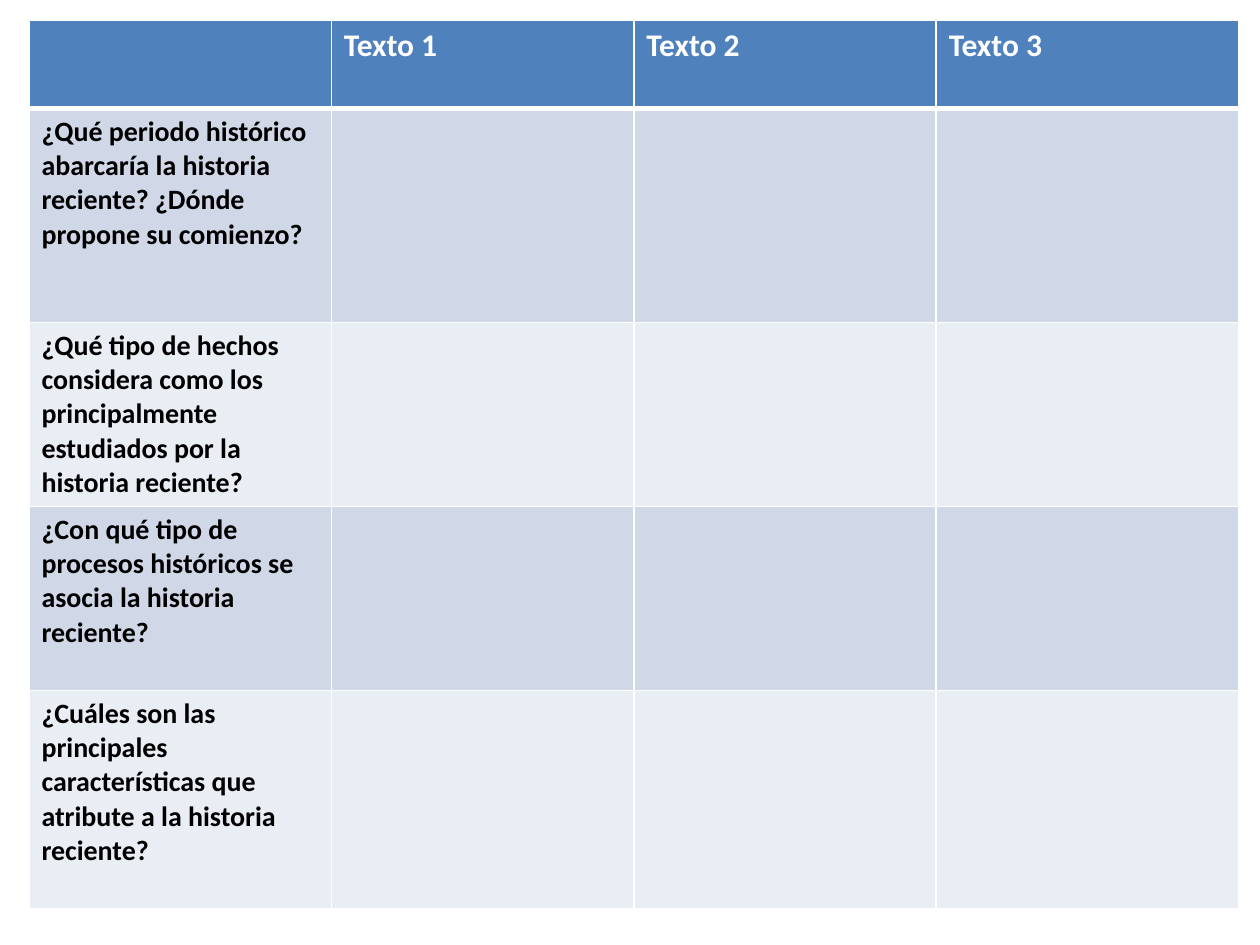
from typing import NamedTuple

from lxml.etree import SubElement
from pptx import Presentation
from pptx.dml.color import RGBColor
from pptx.oxml.ns import qn
from pptx.util import Inches, Pt


class RowSpec(NamedTuple):
    height: float
    fill: str
    texts: tuple[str, ...]
    size: int = 16
    color: str = "000000"
    top: float = 1
    bottom: float = 1


BLUE, WHITE, DARK_BAND, LIGHT_BAND = "4F81BD", "FFFFFF", "D0D8E8", "E9EDF4"
COLUMNS = 4
COLUMN_WIDTH = 2.4
ROWS = [
    RowSpec(0.7, BLUE, ("", "Texto 1", "Texto 2", "Texto 3"), 18, WHITE, bottom=3),
    RowSpec(1.7, DARK_BAND, ("¿Qué periodo histórico abarcaría la historia reciente? "
                             "¿Dónde propone su comienzo?",), top=3),
    RowSpec(1.46, LIGHT_BAND, ("¿Qué tipo de hechos considera como los principalmente "
                               "estudiados por la historia reciente?",)),
    RowSpec(1.46, DARK_BAND, ("¿Con qué tipo de procesos históricos se asocia "
                              "la historia reciente?",)),
    RowSpec(1.73, LIGHT_BAND, ("¿Cuáles son las principales características que "
                               "atribute a la historia reciente?",)),
]


def rgb(value: str) -> RGBColor:
    return RGBColor.from_string(value)


def set_borders(cell, top: float, bottom: float) -> None:
    """Add white borders, widths in points; call before setting the fill."""
    tc_pr = cell._tc.get_or_add_tcPr()
    for side, width in (("L", 1), ("R", 1), ("T", top), ("B", bottom)):
        ln = SubElement(tc_pr, qn(f"a:ln{side}"), w=str(Pt(width)))
        fill = SubElement(ln, qn("a:solidFill"))
        SubElement(fill, qn("a:srgbClr"), val=WHITE)


def fill_cell(cell, row: RowSpec, text: str) -> None:
    set_borders(cell, row.top, row.bottom)
    cell.fill.solid()
    cell.fill.fore_color.rgb = rgb(row.fill)
    if text:
        r = cell.text_frame.paragraphs[0].add_run()
        r.text = text
        r.font.name = "Calibri"
        r.font.size = Pt(row.size)
        r.font.bold = True
        r.font.color.rgb = rgb(row.color)


def main() -> None:
    prs = Presentation()
    prs.slide_width, prs.slide_height = Inches(10), Inches(7.5)
    s = prs.slides.add_slide(prs.slide_layouts[6])
    table = s.shapes.add_table(
        len(ROWS), COLUMNS, Inches(0.23), Inches(0.16),
        Inches(COLUMNS * COLUMN_WIDTH), Inches(sum(row.height for row in ROWS)),
    ).table
    for column in table.columns:
        column.width = Inches(COLUMN_WIDTH)
    for i, row in enumerate(ROWS):
        table.rows[i].height = Inches(row.height)
        for j in range(COLUMNS):
            fill_cell(table.cell(i, j), row, row.texts[j] if j < len(row.texts) else "")
    prs.save("out.pptx")


if __name__ == "__main__":
    main()
